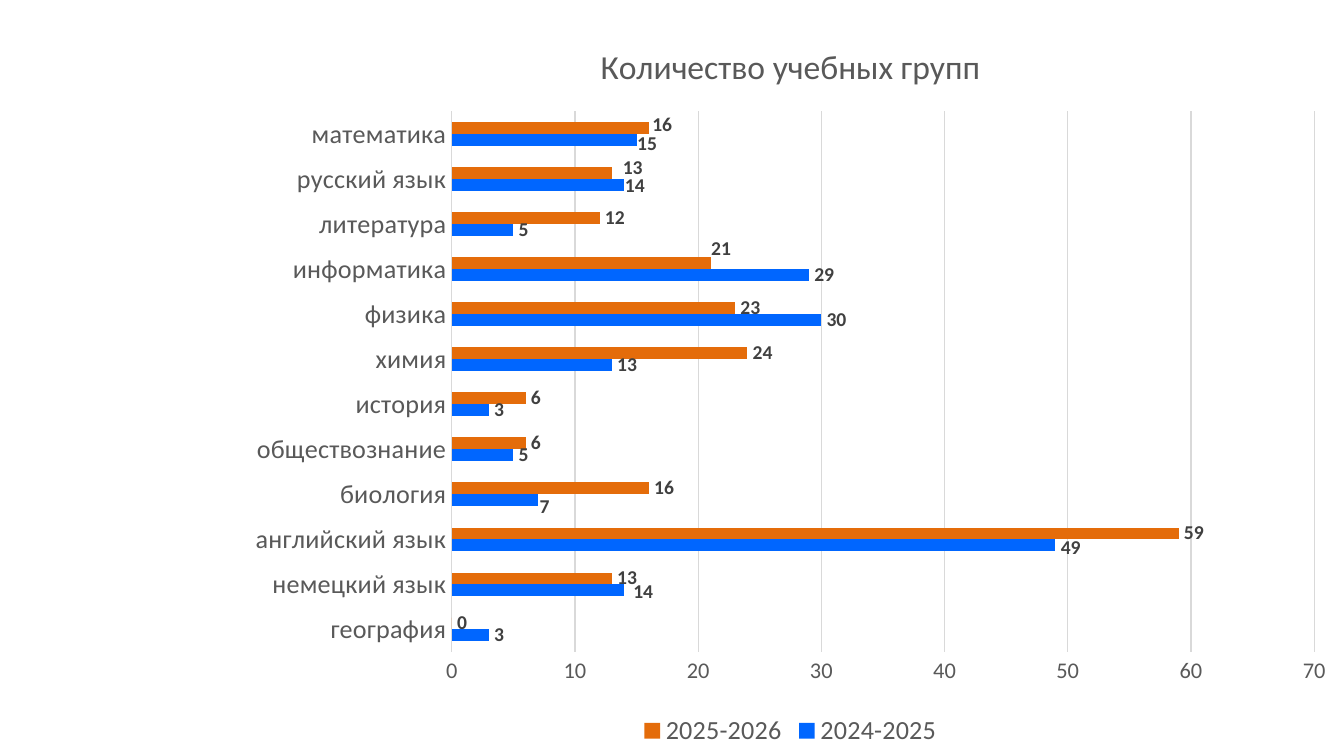
import pptx
import pptx.chart.data
import pptx.dml.color
import pptx.enum.chart
import pptx.oxml
import pptx.oxml.ns
import pptx.util

Pt = pptx.util.Pt
enum = pptx.enum.chart


def paint(color, code):
    color.rgb = pptx.dml.color.RGBColor.from_string(code)


def style(font, size, code, bold=False):
    form = {"name": "Calibri", "size": Pt(size), "bold": bold}
    for key, value in form.items():
        setattr(font, key, value)
    paint(font.color, code)


# Number of groups per subject, listed from the bottom up
rows = [
    ("география", 3, 0),
    ("немецкий язык", 14, 13),
    ("английский язык", 49, 59),
    ("биология", 7, 16),
    ("обществознание", 5, 6),
    ("история", 3, 6),
    ("химия", 13, 24),
    ("физика", 30, 23),
    ("информатика", 29, 21),
    ("литература", 5, 12),
    ("русский язык", 14, 13),
    ("математика", 15, 16),
]
names, old, new = zip(*rows)
GREY, PALE = "595959", "D9D9D9"

# Labels nudged off their bars: point -> (right, down) in points
years = [
    ("2024-2025", old, "0066FF",
     {1: (2, 1), 2: (0, 1.5), 3: (-2, 4), 10: (-2.5, 1), 11: (-2.5, 2.5)}),
    ("2025-2026", new, "E46C0A",
     {8: (-2.5, -7.5), 10: (3, -2.5), 11: (-1, -1.5)}),
]

# Slide
deck = pptx.Presentation()
deck.slide_width, deck.slide_height = Pt(720), Pt(405)
slide = deck.slides.add_slide(deck.slide_layouts[6])

# Chart
data = pptx.chart.data.CategoryChartData()
data.categories = names
for name, values, code, moves in years:
    data.add_series(name, values)
wide, high = 597, 395
chart = slide.shapes.add_chart(
    enum.XL_CHART_TYPE.BAR_CLUSTERED,
    Pt(125), Pt(8), Pt(wide), Pt(high), data).chart
style(chart.font, 18, "000000")

# Title and legend
chart.has_title = True
title = chart.chart_title.text_frame
title.text = "Количество учебных групп"
style(title.paragraphs[0].runs[0].font, 18, GREY)
chart.has_legend = True
legend = chart.legend
legend.position = enum.XL_LEGEND_POSITION.BOTTOM
legend.include_in_layout = False
style(legend.font, 14, GREY)

# Axes
for axis, size in ((chart.category_axis, 14), (chart.value_axis, 12)):
    axis.major_tick_mark = enum.XL_TICK_MARK.NONE
    axis.minor_tick_mark = enum.XL_TICK_MARK.NONE
    style(axis.tick_labels.font, size, GREY)
scale = chart.value_axis
scale.minimum_scale, scale.maximum_scale, scale.major_unit = 0, 70, 10
scale.has_major_gridlines = True
scale.format.line.fill.background()
for line in (chart.category_axis.format.line,
             scale.major_gridlines.format.line):
    paint(line.color, PALE)
    line.width = Pt(0.75)

# Plot area, in shares of the chart
plot = chart.plots[0]
plot.gap_width, plot.overlap, plot.vary_by_categories = 185, 0, False
space = pptx.oxml.ns.nsdecls("c")
area = chart._chartSpace.xpath("c:chart/c:plotArea")[0]
for stale in area.xpath("c:layout"):
    area.remove(stale)
area.insert(0, pptx.oxml.parse_xml(
    f'<c:layout {space}><c:manualLayout><c:layoutTarget val="inner"/>'
    '<c:xMode val="edge"/><c:yMode val="edge"/><c:x val="0.196"/>'
    '<c:y val="0.131"/><c:w val="0.774"/><c:h val="0.733"/>'
    '</c:manualLayout></c:layout>'))

# Bars and their labels
outer = enum.XL_LABEL_POSITION.OUTSIDE_END
for bars, (name, values, code, moves) in zip(plot.series, years):
    bars.format.fill.solid()
    paint(bars.format.fill.fore_color, code)
    labels = bars.data_labels
    labels.show_value = True
    labels.position = outer
    style(labels.font, 10.5, "404040", True)
    for spot, (right, down) in moves.items():
        label = bars.points[spot].data_label
        label.position = outer
        style(label.font, 10.5, "404040", True)
        mark = bars._element.xpath(
            f'c:dLbls/c:dLbl/c:idx[@val="{spot}"]')[0]
        mark.addnext(pptx.oxml.parse_xml(
            f'<c:layout {space}><c:manualLayout>'
            f'<c:x val="{right / wide:.4f}"/><c:y val="{down / high:.4f}"/>'
            '</c:manualLayout></c:layout>'))

deck.save("out.pptx")
